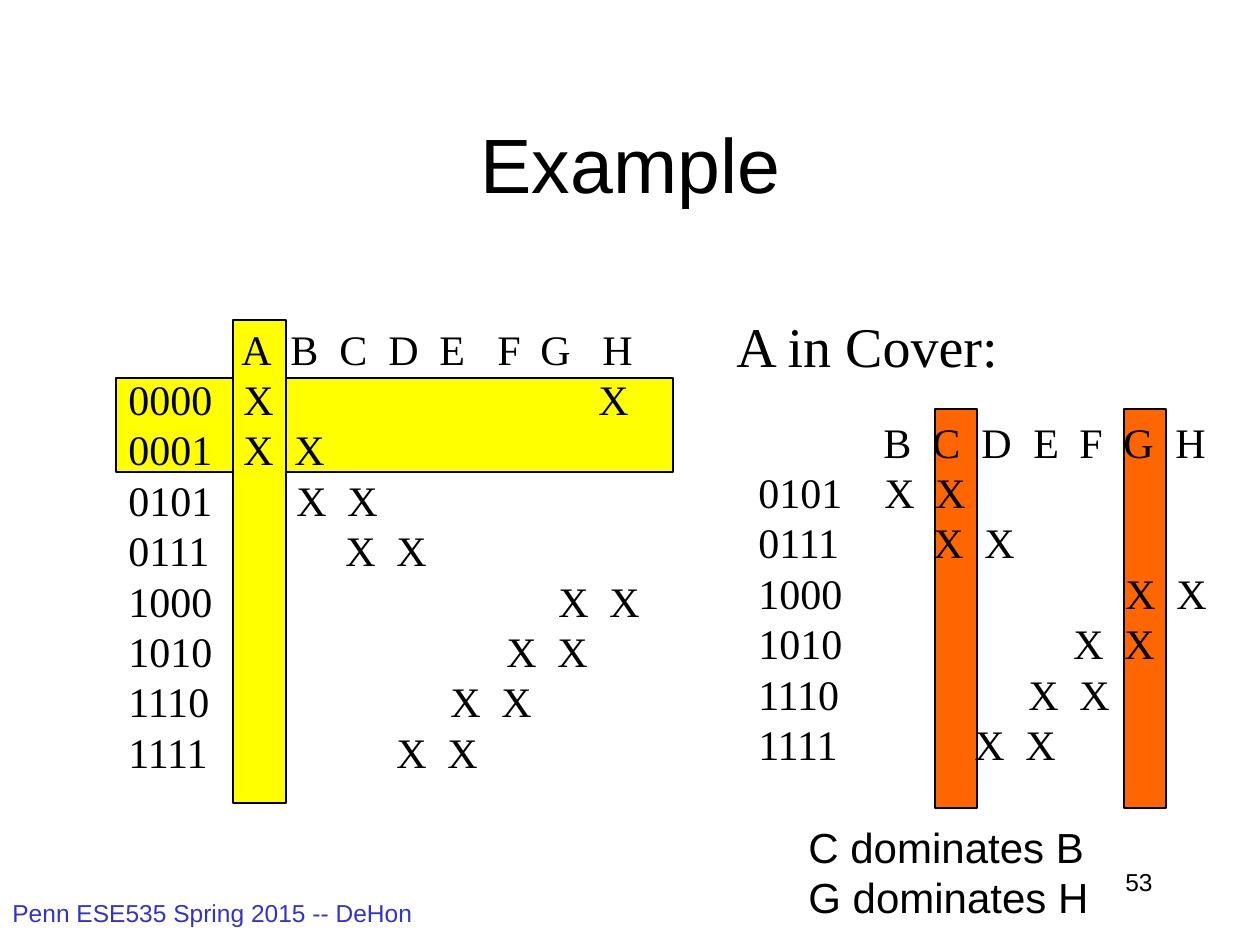
from dataclasses import dataclass
from typing import NamedTuple

from lxml.etree import SubElement
from pptx import Presentation
from pptx.dml.color import RGBColor
from pptx.enum.shapes import MSO_SHAPE as Preset
from pptx.enum.text import MSO_ANCHOR as Anchor, PP_ALIGN as Align
from pptx.oxml.ns import qn
from pptx.util import Pt

EMU_PER_PX = 914400 / 126
PAIR_GAP = 51  # distance between two neighbouring marks


@dataclass(frozen=True)
class Theme:
    ink: str = "000000"
    footer: str = "3333CC"
    chosen: str = "FFFF00"
    dominating: str = "FF6600"
    sans: str = "Arial"
    serif: str = "Times New Roman"
    title: int = 44
    heading: int = 32
    body: int = 24
    small: int = 14
    outline: float = 0.75


THEME = Theme()


class Box(NamedTuple):
    left: int
    top: int
    width: int
    height: int


class Band(NamedTuple):
    box: Box
    fill: str


class Row(NamedTuple):
    """A line of a cover table: label, then one letter at each tab stop."""
    label: str
    letters: str = ""
    stops: tuple[int, ...] = ()


class Label(NamedTuple):
    box: Box
    rows: list[Row]
    size: int
    face: str = THEME.sans
    color: str = THEME.ink
    align: Align = Align.LEFT
    anchor: Anchor = Anchor.TOP


def px(length: int) -> int:
    return round(length * EMU_PER_PX)


def pair(label: str, start: int) -> Row:
    return Row(label, "XX", (start, start + PAIR_GAP))


def add_band(slide, band: Band) -> None:
    rect = slide.shapes.add_shape(Preset.RECTANGLE, *map(px, band.box))
    rect.shadow.inherit = False
    rect.fill.solid()
    rect.fill.fore_color.rgb = RGBColor.from_string(band.fill)
    rect.line.color.rgb = RGBColor.from_string(THEME.ink)
    rect.line.width = Pt(THEME.outline)


def set_tab_stops(paragraph, stops: tuple[int, ...]) -> None:
    tabs = SubElement(paragraph._p.get_or_add_pPr(), qn("a:tabLst"))
    for stop in stops:
        SubElement(tabs, qn("a:tab"), pos=str(px(stop)), algn="l")


def add_label(slide, label: Label) -> None:
    frame = slide.shapes.add_textbox(*map(px, label.box)).text_frame
    frame.word_wrap = True
    frame.vertical_anchor = label.anchor
    font_format = {"size": Pt(label.size), "name": label.face}
    for index, row in enumerate(label.rows):
        line = frame.add_paragraph() if index else frame.paragraphs[0]
        line.alignment = label.align
        if row.stops:
            set_tab_stops(line, row.stops)
        run = line.add_run()
        run.text = "\t".join([row.label, *row.letters])
        for name, value in font_format.items():
            setattr(run.font, name, value)
        run.font.color.rgb = RGBColor.from_string(label.color)


FULL_TABLE = [
    Row("", "ABCDEFGH", (113, 162, 211, 260, 311, 369, 412, 474)),
    Row("0000", "XX", (115, 470)),
    pair("0001", 115),
    pair("0101", 168),
    pair("0111", 217),
    pair("1000", 430),
    pair("1010", 378),
    pair("1110", 322),
    pair("1111", 268),
]
REDUCED_TABLE = [
    Row("", "BCDEFGH", (125, 174, 223, 275, 321, 365, 417)),
    pair("0101", 126),
    pair("0111", 175),
    pair("1000", 367),
    pair("1010", 315),
    pair("1110", 270),
    pair("1111", 216),
]
DOMINANCE = [Row("C dominates B"), Row("G dominates H")]

BANDS = [
    *(Band(Box(left, 409, 42, 399), THEME.dominating) for left in (1124, 935)),
    Band(Box(116, 378, 557, 94), THEME.chosen),
    Band(Box(233, 320, 53, 483), THEME.chosen),
]
LABELS = [
    Label(Box(0, 892, 483, 53), [Row("Penn ESE535 Spring 2015 -- DeHon")],
          THEME.small, color=THEME.footer),
    Label(Box(903, 861, 262, 63), [Row("53")], THEME.small, align=Align.RIGHT),
    Label(Box(95, 84, 1071, 158), [Row("Example")], THEME.title,
          align=Align.CENTER, anchor=Anchor.MIDDLE),
    Label(Box(116, 317, 538, 465), FULL_TABLE, THEME.body, THEME.serif),
    Label(Box(746, 410, 490, 365), REDUCED_TABLE, THEME.body, THEME.serif),
    Label(Box(724, 305, 300, 79), [Row("A in Cover:")], THEME.heading, THEME.serif),
    Label(Box(796, 815, 320, 113), DOMINANCE, THEME.body),
]


def main() -> None:
    deck = Presentation()
    deck.slide_width, deck.slide_height = px(1260), px(945)
    slide = deck.slides.add_slide(deck.slide_layouts[6])
    for band in BANDS:
        add_band(slide, band)
    for label in LABELS:
        add_label(slide, label)
    deck.save("out.pptx")


if __name__ == "__main__":
    main()
